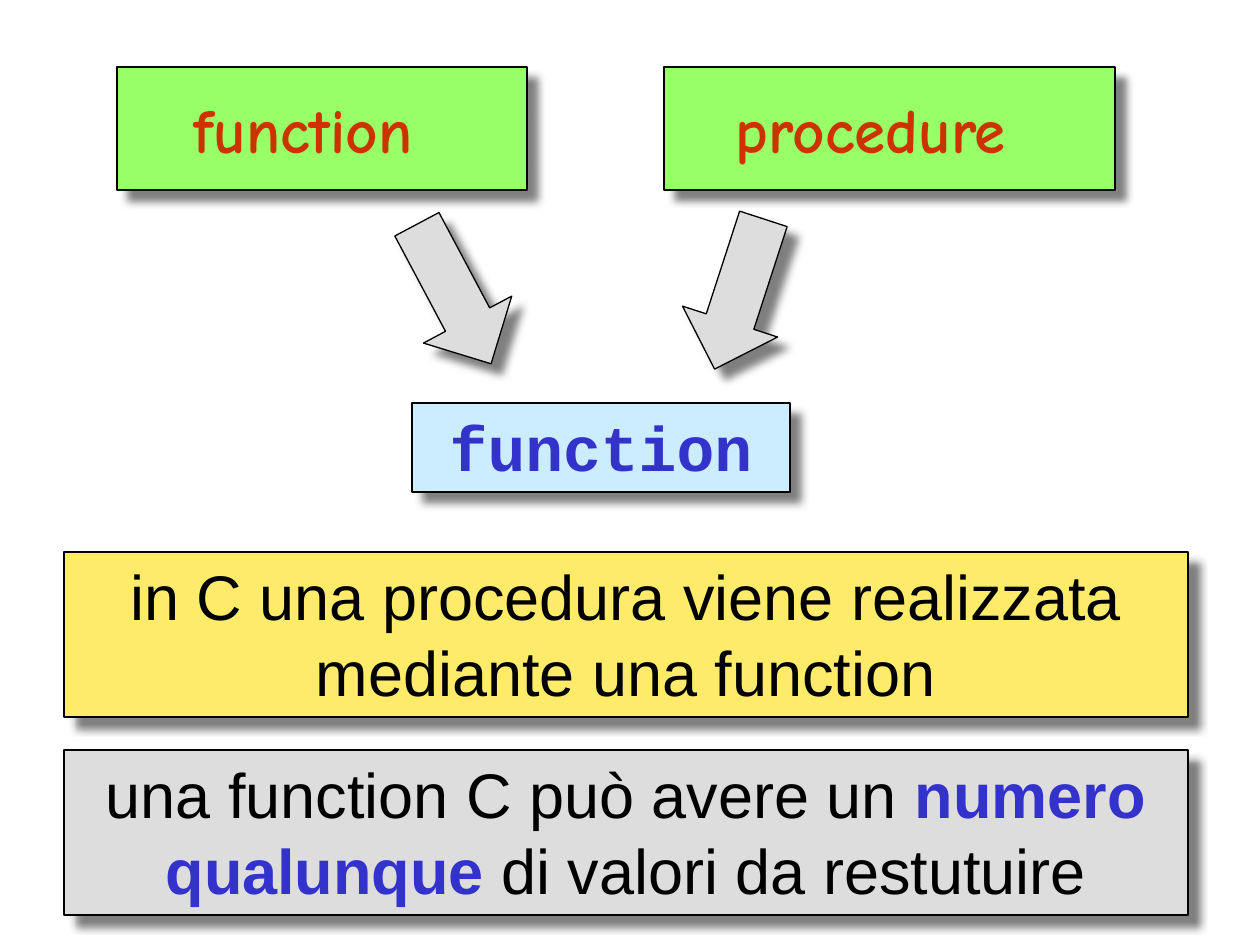
from dataclasses import dataclass

from lxml.etree import SubElement
from pptx import Presentation
from pptx.dml.color import RGBColor
from pptx.enum.shapes import MSO_SHAPE as Shape
from pptx.enum.text import MSO_ANCHOR as Anchor, PP_ALIGN as Align
from pptx.oxml.ns import qn
from pptx.util import Emu, Pt

PX_PER_INCH = 126


@dataclass(frozen=True)
class Theme:
    green: str = "99FF66"
    sky: str = "CCECFF"
    yellow: str = "FDEB69"
    gray: str = "DDDDDD"
    black: str = "000000"
    red: str = "CC3300"
    blue: str = "3333CC"
    shadow: str = "808080"
    body: str = "Arial"
    comic: str = "Comic Neue"
    code: str = "Courier New"
    size: float = 36
    line: float = 0.75
    shadow_blur: float = 5
    shadow_distance: float = 8.5
    shadow_angle: int = 45


T = Theme()


@dataclass(frozen=True)
class Run:
    text: str
    color: str = T.black
    font: str = T.body
    bold: bool = False


@dataclass(frozen=True)
class Box:
    x: int
    y: int
    w: int
    h: int
    fill: str
    runs: tuple[Run, ...]
    top: int = 6
    right: int = 13


@dataclass(frozen=True)
class Arrow:
    x: int
    rotation: int


def px(n: int) -> Emu:
    return Emu(round(n * 914400 / PX_PER_INCH))


def add_shadow(s) -> None:
    s.shadow.inherit = False
    effects = s._element.spPr.find(qn("a:effectLst"))
    shadow = SubElement(effects, qn("a:outerShdw"), blurRad=str(Pt(T.shadow_blur)),
                        dist=str(Pt(T.shadow_distance)),
                        dir=str(T.shadow_angle * 60000), algn="ctr", rotWithShape="0")
    SubElement(shadow, qn("a:srgbClr"), val=T.shadow)


def add_shape(sp, kind: Shape, x: int, y: int, w: int, h: int, fill: str):
    s = sp.add_shape(kind, px(x), px(y), px(w), px(h))
    s.fill.solid()
    s.fill.fore_color.rgb = RGBColor.from_string(fill)
    s.line.color.rgb = RGBColor.from_string(T.black)
    s.line.width = Pt(T.line)
    add_shadow(s)
    return s


def add_text(p, text: str, *, font: str, color: str, bold: bool) -> None:
    r = p.add_run()
    r.text = text
    r.font.name = font
    r.font.size = Pt(T.size)
    r.font.bold = bold
    r.font.color.rgb = RGBColor.from_string(color)


def add_box(sp, box: Box) -> None:
    s = add_shape(sp, Shape.RECTANGLE, box.x, box.y, box.w, box.h, box.fill)
    tf = s.text_frame
    tf.word_wrap = True
    tf.vertical_anchor = Anchor.TOP
    tf.margin_left, tf.margin_right = px(13), px(box.right)
    tf.margin_top, tf.margin_bottom = px(box.top), px(6)
    p = tf.paragraphs[0]
    p.alignment = Align.CENTER
    for run in box.runs:
        add_text(p, run.text, font=run.font, color=run.color, bold=run.bold)


def add_arrow(sp, arrow: Arrow) -> None:
    s = add_shape(sp, Shape.DOWN_ARROW, arrow.x, 215, 100, 158, T.gray)
    s.rotation = arrow.rotation


def concept(x: int, w: int, text: str) -> Box:
    return Box(x, 67, w, 123, T.green, (Run(text, T.red, T.comic, True),),
               top=24, right=51)


def statement(y: int, fill: str, *runs: Run) -> Box:
    return Box(64, y, 1124, 165, fill, runs)


BOXES = (
    # The two concepts and the C construct they lead to
    concept(117, 410, "function"),
    concept(664, 451, "procedure"),
    Box(412, 403, 378, 89, T.sky, (Run("function", T.blue, T.code, True),)),
    # Statements
    statement(552, T.yellow,
              Run("in C una procedura viene realizzata mediante una function")),
    statement(750, T.gray,
              Run("una function C può avere un "),
              Run("numero qualunque", T.blue, bold=True),
              Run(" di valori da restutuire")),
)
ARROWS = (Arrow(404, 332), Arrow(689, 18))


def main() -> None:
    prs = Presentation()
    prs.slide_width, prs.slide_height = px(1260), px(945)
    sp = prs.slides.add_slide(prs.slide_layouts[6]).shapes
    for box in BOXES:
        add_box(sp, box)
    for arrow in ARROWS:
        add_arrow(sp, arrow)
    prs.save("out.pptx")


if __name__ == "__main__":
    main()
